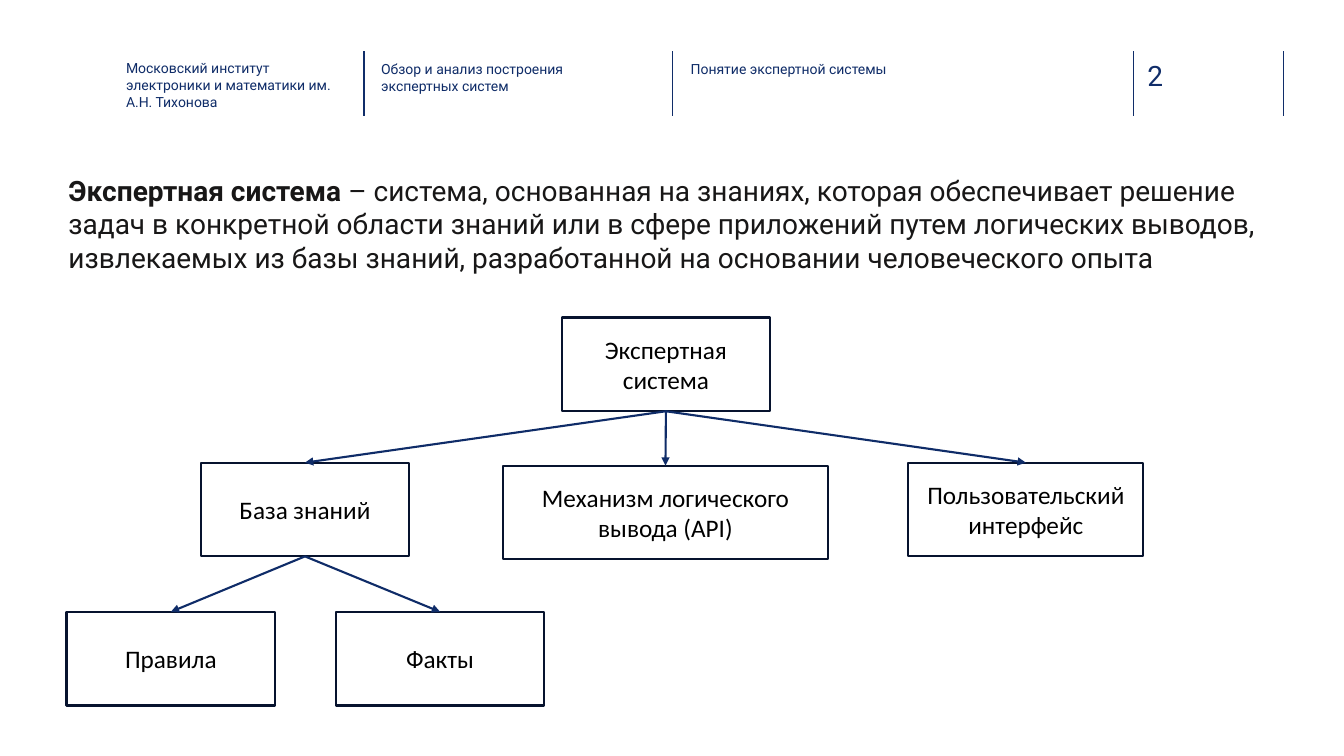
from dataclasses import dataclass
from typing import Any

import lxml.etree
import pptx
import pptx.dml.color
import pptx.enum.shapes
import pptx.enum.text
import pptx.oxml.ns
import pptx.util

PX = 9144  # EMU per px, 100 px to the inch
BOTTOM, TOP = 2, 0  # connection sites of a rectangle


@dataclass(frozen=True)
class Theme:
    header: str = "0F2C68"
    rule: str = "102D69"
    ink: str = "181717"
    node_text: str = "000000"
    node_line: str = "07132E"
    text_font: str = "Roboto"
    node_font: str = "Calibri"
    small: int = 10
    node_size: int = 18
    large: int = 20
    thin: float = 1
    thick: float = 1.5


THEME = Theme()


@dataclass(frozen=True)
class Box:
    left: int
    top: int
    width: int
    height: int


@dataclass(frozen=True)
class TextBlock:
    box: Box
    runs: tuple[tuple[str, bool], ...]
    size: int
    color: str
    inset: tuple[int, int] = (0, 0)
    grow: bool = False


@dataclass(frozen=True)
class Node:
    text: str
    left: int
    top: int
    width: int = 207
    height: int = 93


# Header
RULE_XS = (361, 667, 1124, 1273)
RULE_TOP, RULE_BOTTOM = 51, 115
TEXTS = (
    TextBlock(Box(1138, 58, 73, 34), (("2", False),), THEME.large, THEME.rule, grow=True),
    TextBlock(
        Box(125, 59, 208, 45),
        (("Московский институт электроники и математики им. А.Н. Тихонова", False),),
        THEME.small, THEME.header,
    ),
    TextBlock(
        Box(378, 60, 226, 45),
        (("Обзор и анализ построения экспертных систем", False),),
        THEME.small, THEME.header,
    ),
    TextBlock(
        Box(685, 60, 226, 45),
        (("Понятие экспертной системы", False),),
        THEME.small, THEME.header,
    ),
    # Definition
    TextBlock(
        Box(58, 167, 1205, 111),
        (
            ("Экспертная система ", True),
            ("– система, основанная на знаниях, которая обеспечивает решение задач "
             "в конкретной области знаний или в сфере приложений путем логических "
             "выводов, извлекаемых из базы знаний, разработанной на основании "
             "человеческого опыта", False),
        ),
        THEME.large, THEME.ink, inset=(10, 5), grow=True,
    ),
)

# Tree of components
NODES = {
    "system": Node("Экспертная система", 557, 315),
    "knowledge": Node("База знаний", 199, 459),
    "inference": Node("Механизм логического вывода (API)", 499, 462, width=322),
    "rules": Node("Правила", 66, 607),
    "facts": Node("Факты", 333, 607),
    "interface": Node("Пользовательский интерфейс", 901, 459, width=233),
}
CHILDREN = {
    "system": ("knowledge", "inference", "interface"),
    "knowledge": ("rules", "facts"),
}


def rgb(color: str) -> pptx.dml.color.RGBColor:
    return pptx.dml.color.RGBColor.from_string(color)


def apply(target: Any, values: dict[str, Any]) -> None:
    for name, value in values.items():
        setattr(target, name, value)


def style_font(font: Any, name: str, size: int, color: str, bold: bool = False) -> None:
    apply(font, {"name": name, "size": pptx.util.Pt(size), "bold": bold})
    font.color.rgb = rgb(color)


def style_line(line: Any, color: str, width: float) -> None:
    line.color.rgb = rgb(color)
    line.width = pptx.util.Pt(width)


def draw_text(slide: Any, block: TextBlock) -> None:
    box = block.box
    shape = slide.shapes.add_textbox(
        box.left * PX, box.top * PX, box.width * PX, box.height * PX
    )
    across, down = (value * PX for value in block.inset)
    fit = pptx.enum.text.MSO_AUTO_SIZE
    apply(shape.text_frame, {
        "word_wrap": True,
        "auto_size": fit.SHAPE_TO_FIT_TEXT if block.grow else fit.NONE,
        "margin_left": across, "margin_right": across,
        "margin_top": down, "margin_bottom": down,
    })
    paragraph = shape.text_frame.paragraphs[0]
    for text, bold in block.runs:
        run = paragraph.add_run()
        run.text = text
        style_font(run.font, THEME.text_font, block.size, block.color, bold)


def draw_node(slide: Any, node: Node) -> Any:
    shape = slide.shapes.add_shape(
        pptx.enum.shapes.MSO_SHAPE.RECTANGLE,
        node.left * PX, node.top * PX, node.width * PX, node.height * PX,
    )
    shape.shadow.inherit = False
    shape.fill.background()
    style_line(shape.line, THEME.node_line, THEME.thick)
    apply(shape.text_frame, {
        "word_wrap": True,
        "vertical_anchor": pptx.enum.text.MSO_ANCHOR.MIDDLE,
    })
    paragraph = shape.text_frame.paragraphs[0]
    paragraph.alignment = pptx.enum.text.PP_ALIGN.CENTER
    run = paragraph.add_run()
    run.text = node.text
    style_font(run.font, THEME.node_font, THEME.node_size, THEME.node_text)
    return shape


def draw_line(slide: Any, ends: tuple[int, int, int, int], color: str, width: float) -> Any:
    connector = slide.shapes.add_connector(
        pptx.enum.shapes.MSO_CONNECTOR.STRAIGHT, *(value * PX for value in ends)
    )
    style_line(connector.line, color, width)
    properties = connector._element.spPr
    lxml.etree.SubElement(properties, pptx.oxml.ns.qn("a:effectLst"))
    return connector


def draw_arrow(slide: Any, parent: Any, child: Any) -> None:
    connector = draw_line(slide, (0, 0, 0, 0), THEME.header, THEME.thick)
    connector.begin_connect(parent, BOTTOM)
    connector.end_connect(child, TOP)
    line = connector.line._get_or_add_ln()
    lxml.etree.SubElement(line, pptx.oxml.ns.qn("a:tailEnd"), type="triangle")


def main() -> None:
    presentation = pptx.Presentation()
    apply(presentation, {"slide_width": 1333 * PX, "slide_height": 750 * PX})
    slide = presentation.slides.add_slide(presentation.slide_layouts[6])

    # Header and definition
    for x in RULE_XS:
        draw_line(slide, (x, RULE_TOP, x, RULE_BOTTOM), THEME.rule, THEME.thin)
    for block in TEXTS:
        draw_text(slide, block)

    # Tree
    shapes = {key: draw_node(slide, node) for key, node in NODES.items()}
    for parent, children in CHILDREN.items():
        for child in children:
            draw_arrow(slide, shapes[parent], shapes[child])

    presentation.save("out.pptx")


if __name__ == "__main__":
    main()
